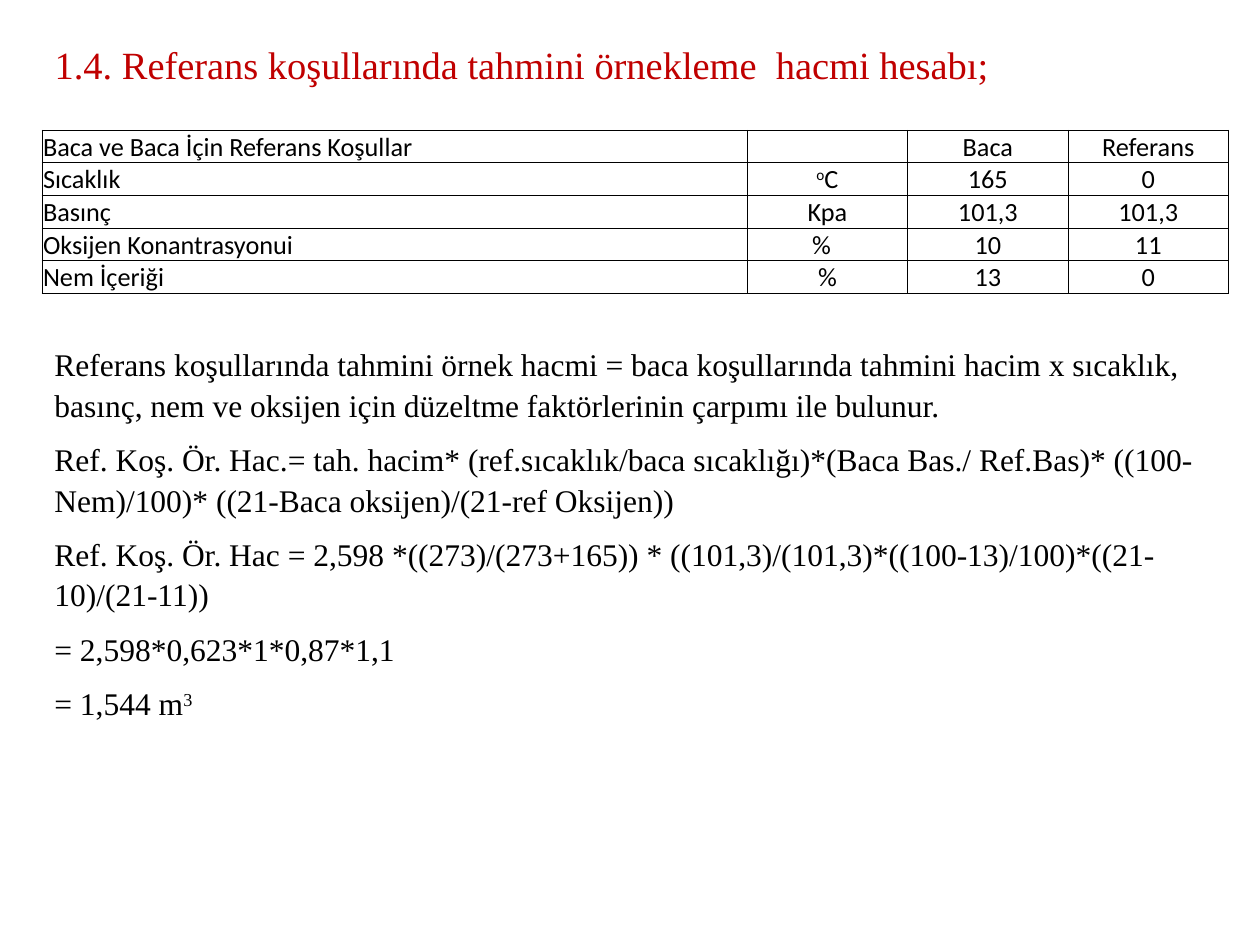
"""Build the slide on estimating sample volume at reference conditions."""
from lxml import etree
from pptx import Presentation
from pptx import util as u
from pptx.dml.color import RGBColor
from pptx.enum import text
from pptx.oxml import ns

TITLE = "1.4. Referans koşullarında tahmini örnekleme  hacmi hesabı;"
CONDITIONS = [
    ("Baca ve Baca İçin Referans Koşullar", "", "Baca", "Referans"),
    ("Sıcaklık", [("o", 30), ("C", 0)], "165", "0"),
    ("Basınç", "Kpa", "101,3", "101,3"),
    ("Oksijen Konantrasyonui", "%  ", "10", "11"),
    ("Nem İçeriği", "%", "13", "0"),
]
CALCULATION = [
    "Referans koşullarında tahmini örnek hacmi = baca koşullarında tahmini hacim x sıcaklık, "
    "basınç, nem ve oksijen için düzeltme faktörlerinin çarpımı ile bulunur.",
    "Ref. Koş. Ör. Hac.= tah. hacim* (ref.sıcaklık/baca sıcaklığı)*(Baca Bas./ Ref.Bas)* "
    "((100-Nem)/100)* ((21-Baca oksijen)/(21-ref Oksijen))",
    "Ref. Koş. Ör. Hac = 2,598 *((273)/(273+165)) * "
    "((101,3)/(101,3)*((100-13)/100)*((21-10)/(21-11))",
    "= 2,598*0,623*1*0,87*1,1",
    [("= 1,544 m", 0), ("3", 30)],
]
BLACK = RGBColor(0, 0, 0)
THEME = {
    "title": {"name": "Times New Roman", "size": u.Pt(22), "color": RGBColor(0xC0, 0, 0)},
    "body": {"name": "Times New Roman", "size": u.Pt(18), "color": BLACK},
    "table": {"name": "Calibri", "size": u.Pt(15), "color": BLACK},
    "border": {"color": "000000", "width": u.Pt(0.5)},
}
LEFT, TEXT_WIDTH = 24, 672
TABLE_TOP, ROW_HEIGHT = 74.4, 18.65
COLUMN_WIDTHS = [403, 91.7, 91.7, 91.7]
PROSE = {"line_spacing": 1.07, "space_before": u.Pt(0), "space_after": u.Pt(8),
         "alignment": text.PP_ALIGN.LEFT}
FRAME = {"word_wrap": True, "vertical_anchor": text.MSO_ANCHOR.TOP,
         "auto_size": text.MSO_AUTO_SIZE.SHAPE_TO_FIT_TEXT}
CELL = {"margin_left": u.Pt(0.6), "margin_right": u.Pt(0.6), "margin_top": u.Pt(0.6),
        "margin_bottom": 0, "vertical_anchor": text.MSO_ANCHOR.MIDDLE}


def apply(target, values):
    for name, value in values.items():
        setattr(target, name, value)


def write(paragraph, content, style, layout):
    apply(paragraph, layout)
    parts = [(content, 0)] if isinstance(content, str) else content
    for wording, baseline in parts:
        if not wording:
            paragraph._p.get_or_add_endParaRPr().set("sz", str(int(style["size"].pt * 100)))
            continue
        run = paragraph.add_run()
        run.text = wording
        apply(run.font, {"name": style["name"], "size": style["size"]})
        run.font.color.rgb = style["color"]
        if baseline:
            run._r.get_or_add_rPr().set("baseline", str(baseline * 1000))


def place(shape, top, height, paragraphs, style):
    apply(shape, {"left": u.Pt(LEFT), "top": u.Pt(top),
                  "width": u.Pt(TEXT_WIDTH), "height": u.Pt(height)})
    frame = shape.text_frame
    apply(frame, FRAME)
    for index, content in enumerate(paragraphs):
        paragraph = frame.add_paragraph() if index else frame.paragraphs[0]
        write(paragraph, content, style, PROSE)


def outline(cell):
    properties = cell._tc.get_or_add_tcPr()
    for side in ("lnL", "lnR", "lnT", "lnB"):
        line = etree.SubElement(properties, ns.qn("a:" + side), w=str(THEME["border"]["width"]))
        fill = etree.SubElement(line, ns.qn("a:solidFill"))
        etree.SubElement(fill, ns.qn("a:srgbClr"), val=THEME["border"]["color"])


def add_conditions(slide):
    table = slide.shapes.add_table(
        len(CONDITIONS), len(COLUMN_WIDTHS), u.Pt(LEFT), u.Pt(TABLE_TOP),
        u.Pt(sum(COLUMN_WIDTHS)), u.Pt(ROW_HEIGHT * len(CONDITIONS))).table
    apply(table, {"first_row": False, "horz_banding": False})
    for column, width in zip(table.columns, COLUMN_WIDTHS):
        column.width = u.Pt(width)
    for row, values in zip(table.rows, CONDITIONS):
        row.height = u.Pt(ROW_HEIGHT)
        for index, (cell, value) in enumerate(zip(row.cells, values)):
            apply(cell, CELL)
            outline(cell)
            cell.fill.background()
            alignment = text.PP_ALIGN.CENTER if index else text.PP_ALIGN.LEFT
            write(cell.text_frame.paragraphs[0], value, THEME["table"], {"alignment": alignment})


def main():
    presentation = Presentation()
    apply(presentation, {"slide_width": u.Pt(720), "slide_height": u.Pt(540)})
    slide = presentation.slides.add_slide(presentation.slide_layouts[5])
    place(slide.shapes.title, 18, 34, [TITLE], THEME["title"])
    body = slide.shapes.add_textbox(0, 0, 0, 0)
    place(body, 192.3, 224.6, CALCULATION, THEME["body"])
    add_conditions(slide)
    presentation.save("out.pptx")


if __name__ == "__main__":
    main()
